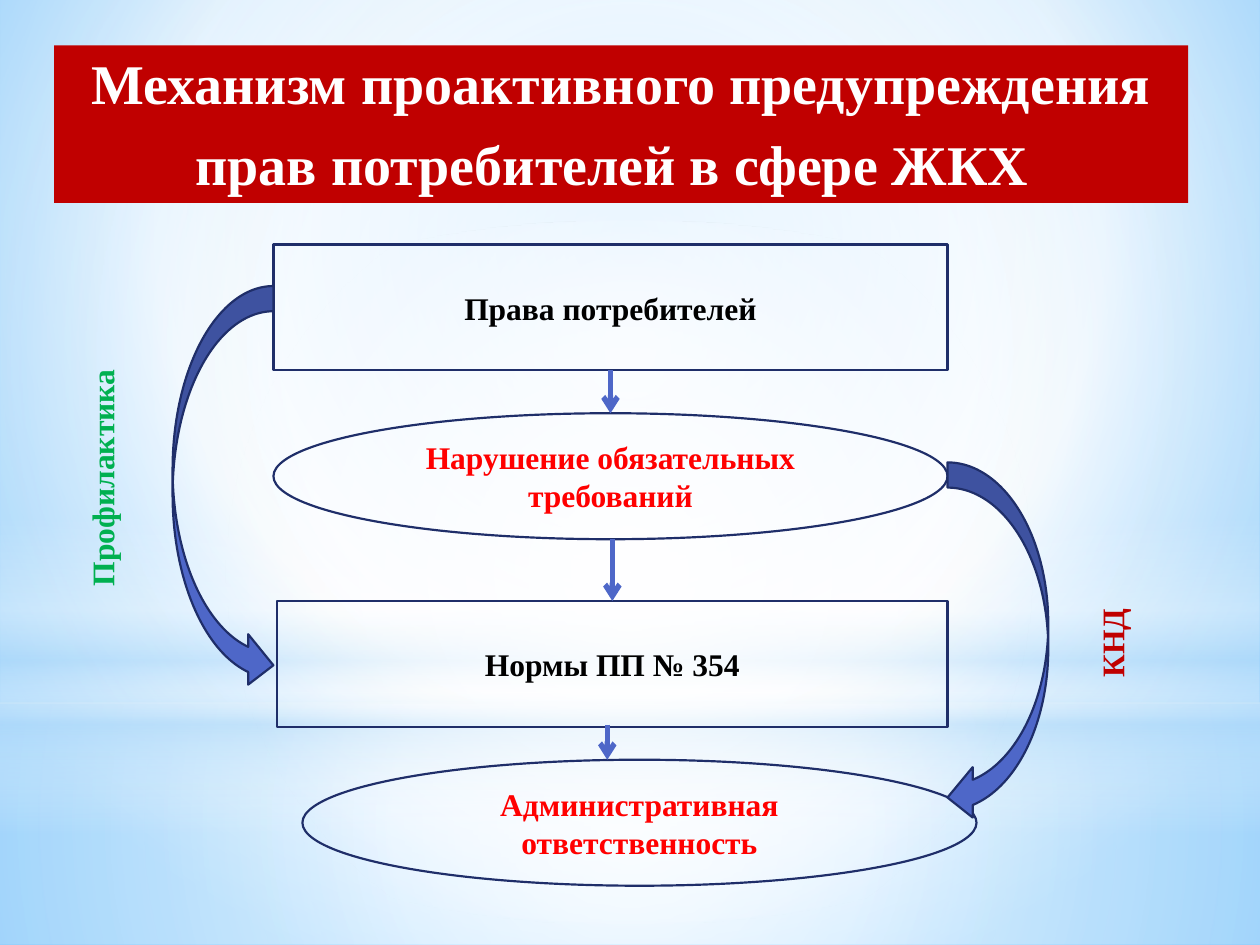
from lxml import etree
from pptx import Presentation, oxml, util as u
from pptx.dml.color import RGBColor
from pptx.enum import shapes, text
from pptx.oxml import ns

COLORS = {"white": "FFFFFF", "black": "000000", "title": "C00000", "alert": "FF0000",
          "prevention": "00B050", "outline": "1F2E69", "accent": "4E67C8",
          "haze": "B4DCFA", "sky": "9ED5FF", "deep_sky": "5BB9FF"}
FONT = "Times New Roman"
KIND = shapes.MSO_SHAPE


def color(name):
    """Return the named palette colour."""
    return RGBColor.from_string(COLORS[name])


def set_gradient(holder, stops, centre=None):
    """Swap the gradient in holder for stops of position, colour and opacity."""
    marks = "".join(
        f'<a:gs pos="{pos * 1000}"><a:srgbClr val="{COLORS[name]}">'
        f'<a:alpha val="{opacity * 1000}"/></a:srgbClr></a:gs>'
        for pos, name, opacity in stops)
    direction = '<a:lin ang="5400000" scaled="0"/>'
    if centre:
        sides = " ".join(f'{side}="{part * 1000}"' for side, part in zip("ltrb", centre))
        direction = f'<a:path path="circle"><a:fillToRect {sides}/></a:path>'
    fill = oxml.parse_xml(f'<a:gradFill {ns.nsdecls("a")} rotWithShape="1">'
                          f'<a:gsLst>{marks}</a:gsLst>{direction}</a:gradFill>')
    former = holder.find(ns.qn("a:gradFill"))
    holder.replace(former, fill)


def add_background(page):
    """Paint the sky gradient and its translucent light layers."""
    page.background.fill.gradient()
    set_gradient(page.element.find(".//" + ns.qn("p:bgPr")),
                 [(0, "sky", 100), (60, "white", 100), (100, "deep_sky", 100)],
                 (20, 10, 20, 60))
    middle = (50, 50, 50, 50)
    layers = [
        (KIND.RECTANGLE, (0, 5.58, 10, 1.92),
         [(0, "white", 91), (37, "white", 76), (100, "haze", 79)], middle),
        (KIND.RECTANGLE, (0, 0, 10, 5.58),
         [(0, "white", 89), (48, "white", 62), (100, "haze", 79)], middle),
        (KIND.RECTANGLE, (0, 4.12, 10, 2.5),
         [(0, "white", 0), (29, "white", 30), (45, "haze", 40),
          (55, "white", 26), (65, "haze", 60), (100, "white", 0)], None),
        (KIND.OVAL, (0, 1.75, 10, 5.58),
         [(0, "white", 100), (56, "white", 0)], middle),
    ]
    for kind, place, stops, centre in layers:
        layer = add_shape(page, kind, place)
        layer.fill.gradient()
        set_gradient(layer.element.spPr, stops, centre)


def add_shape(page, kind, place, fill=None, outline=None):
    """Add a preset shape with an optional fill and outline."""
    box = page.shapes.add_shape(kind, *map(u.Inches, place))
    box.shadow.inherit = False
    if fill:
        box.fill.solid()
        box.fill.fore_color.rgb = color(fill)
    else:
        box.fill.background()
    if outline:
        box.line.color.rgb = color(outline)
        box.line.width = u.Pt(1.25)
    else:
        box.line.fill.background()
    return box


def add_span(para, words, name, size=18):
    """Append one bold run to a paragraph."""
    span = para.add_run()
    span.text = words
    for key, value in {"name": FONT, "size": u.Pt(size), "bold": True}.items():
        setattr(span.font, key, value)
    span.font.color.rgb = color(name)


def write(box, words, name, size=18):
    """Put centred text in a shape and return its paragraph."""
    frame = box.text_frame
    for key, value in {"word_wrap": True, "vertical_anchor": text.MSO_ANCHOR.MIDDLE}.items():
        setattr(frame, key, value)
    para = frame.paragraphs[0]
    para.alignment = text.PP_ALIGN.CENTER
    add_span(para, words, name, size)
    return para


def add_step(page, kind, place, words, name):
    """Add an outlined step of the mechanism."""
    box = add_shape(page, kind, place, outline="outline")
    write(box, words, name)
    return box


def add_arrow(page, x, top, bottom):
    """Add a downward arrow between two steps."""
    arrow = page.shapes.add_connector(
        shapes.MSO_CONNECTOR.STRAIGHT, *map(u.Inches, (x, top, x, bottom)))
    arrow.line.color.rgb = color("accent")
    arrow.line.width = u.Pt(3)
    etree.SubElement(arrow.line._get_or_add_ln(), ns.qn("a:tailEnd"), type="arrow")
    etree.SubElement(arrow.element.spPr, ns.qn("a:effectLst"))
    return arrow


def add_side_label(page, place, words, name):
    """Add a label that reads upwards."""
    box = page.shapes.add_textbox(*map(u.Inches, place))
    box.rotation = 270
    box.text_frame.word_wrap = False
    box.text_frame.auto_size = text.MSO_AUTO_SIZE.SHAPE_TO_FIT_TEXT
    add_span(box.text_frame.paragraphs[0], words, name)


def main():
    """Build the slide and save it."""
    deck = Presentation()
    deck.slide_width, deck.slide_height = u.Inches(10), u.Inches(7.5)
    page = deck.slides.add_slide(deck.slide_layouts[6])
    add_background(page)

    title = add_shape(page, KIND.RECTANGLE, (0.43, 0.36, 9, 1.25), fill="title")
    para = write(title, "Механизм проактивного предупреждения прав потребителей в сфере ЖКХ",
                 "white", 32)
    add_span(para, " ", "white", 40)

    rights = add_step(page, KIND.RECTANGLE, (2.17, 1.94, 5.35, 1),
                      "Права потребителей", "black")
    norms = add_step(page, KIND.RECTANGLE, (2.2, 4.77, 5.32, 1),
                     "Нормы ПП № 354", "black")
    violation = add_step(page, KIND.OVAL, (2.17, 3.28, 5.35, 1),
                         "Нарушение обязательных требований", "alert")
    add_shape(page, KIND.CURVED_RIGHT_ARROW, (1.37, 2.27, 0.8, 3.21), "accent", "outline")
    add_step(page, KIND.OVAL, (2.4, 6.03, 5.35, 1),
             "Административная ответственность", "alert")
    add_shape(page, KIND.CURVED_LEFT_ARROW, (7.52, 3.67, 0.8, 2.86), "accent", "outline")

    to_violation = add_arrow(page, 4.84, 2.94, 3.28)
    to_violation.begin_connect(rights, 2)
    to_violation.end_connect(violation, 0)
    add_arrow(page, 4.86, 4.28, 4.77).end_connect(norms, 0)
    add_arrow(page, 4.82, 5.75, 6.03)

    add_side_label(page, (-0.16, 3.58, 1.94, 0.4), "Профилактика", "prevention")
    add_side_label(page, (8.45, 4.9, 0.75, 0.4), "КНД", "title")
    deck.save("out.pptx")


if __name__ == "__main__":
    main()
